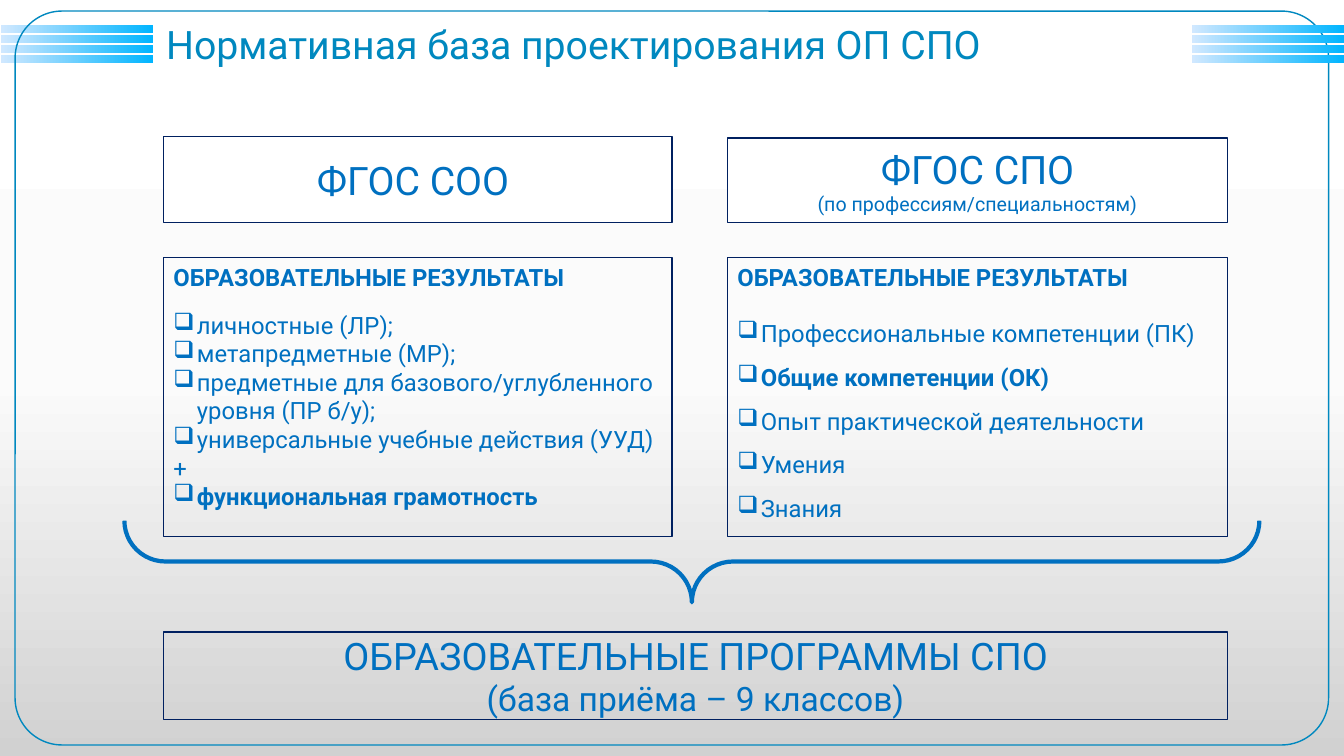
from lxml import etree
from copy import deepcopy
from pptx import Presentation
from pptx.dml import color
from pptx.enum import shapes, text
from pptx.oxml import ns
from pptx.util import Pt

BLUE = "0070C0"
NAVY = "002060"
TEAL = "0088BF"
HEADING = "ОБРАЗОВАТЕЛЬНЫЕ РЕЗУЛЬТАТЫ"


def rgb(value):
    return color.RGBColor.from_string(value)


def paint_gradient(fill, colours, angle):
    for stop, colour in zip(fill.gradient_stops, colours):
        stop.color.rgb = rgb(colour)
    fill.gradient_angle = angle


def paint_background(slide):
    fill = slide.background.fill
    fill.gradient()
    stops = slide.element.find(".//" + ns.qn("a:gsLst"))
    stops.append(deepcopy(stops[-1]))
    fill.gradient_stops[1].position = 0.5
    paint_gradient(fill, ["FFFFFF", "FBFBFB", "D1D1D1"], 270)


def add_outline(slide, kind, box, line, width=1, fill=None):
    outline = slide.shapes.add_shape(kind, *map(Pt, box))
    outline.shadow.inherit = False
    if fill:
        outline.fill.solid()
        outline.fill.fore_color.rgb = rgb(fill)
    else:
        outline.fill.background()
    outline.line.color.rgb = rgb(line)
    outline.line.width = Pt(width)
    return outline


def add_stripes(slide, left):
    for row in range(4):
        stripe = slide.shapes.add_shape(
            shapes.MSO_SHAPE.RECTANGLE, Pt(left), Pt(18 + 7 * row), Pt(108.7), Pt(5.8))
        stripe.shadow.inherit = False
        stripe.line.fill.background()
        stripe.fill.gradient()
        paint_gradient(stripe.fill, ["D1E8FF", "00B5FF"], 0)


def add_bullet(paragraph):
    properties = paragraph._p.get_or_add_pPr()
    properties.set("marL", str(Pt(16.8)))
    properties.set("indent", str(-Pt(16.8)))
    etree.SubElement(properties, ns.qn("a:buChar")).set("char", "❑")


def write(paragraph, words, size, colour=BLUE, bold=False, align=text.PP_ALIGN.LEFT):
    paragraph.text = words
    paragraph.alignment = align
    font = paragraph.font
    font.name = "Roboto"
    font.size = Pt(size)
    font.bold = bold
    font.color.rgb = rgb(colour)


def next_paragraph(frame, index):
    return frame.add_paragraph() if index else frame.paragraphs[0]


def add_title(slide, words):
    title = slide.shapes.add_textbox(Pt(111.6), Pt(15), Pt(737), Pt(39.6)).text_frame
    title.word_wrap = True
    write(title.paragraphs[0], words, 28, TEAL)
    title.paragraphs[0].line_spacing = 0.9


def add_banner(slide, box, lines, fill=None):
    frame = add_outline(slide, shapes.MSO_SHAPE.RECTANGLE, box, NAVY, fill=fill).text_frame
    frame.word_wrap = True
    frame.vertical_anchor = text.MSO_ANCHOR.MIDDLE
    for index, (words, size) in enumerate(lines):
        write(next_paragraph(frame, index), words, size, align=text.PP_ALIGN.CENTER)


def add_results(slide, box, first_gap, gap, items, strong):
    frame = add_outline(slide, shapes.MSO_SHAPE.RECTANGLE, box, NAVY).text_frame
    frame.word_wrap = True
    frame.vertical_anchor = text.MSO_ANCHOR.TOP
    write(frame.paragraphs[0], HEADING, 17, bold=True)
    for index, item in enumerate(items):
        paragraph = frame.add_paragraph()
        if item != "+":
            add_bullet(paragraph)
        write(paragraph, item, 17, bold=item == strong)
        paragraph.space_before = Pt(gap if index else first_gap)


def add_brace(slide):
    brace = add_outline(
        slide, shapes.MSO_SHAPE.LEFT_BRACE, (465.1, -4.3, 58.3, 810.7), BLUE, 3)
    brace.adjustments[0] = 0.504
    brace.adjustments[1] = 0.5
    brace.rotation = 270


def main():
    deck = Presentation()
    deck.slide_width, deck.slide_height = Pt(960), Pt(540)
    slide = deck.slides.add_slide(deck.slide_layouts[6])
    paint_background(slide)

    add_stripes(slide, 0.7)
    border = add_outline(
        slide, shapes.MSO_SHAPE.ROUNDED_RECTANGLE, (10.8, 7.9, 938.2, 524.2), TEAL)
    border.adjustments[0] = 0.064
    add_stripes(slide, 851.5)
    add_title(slide, "Нормативная база проектирования ОП СПО")

    add_banner(slide, (117, 97.4, 363, 61.6), [("ФГОС СОО ", 28)], "FFFFFF")
    add_banner(slide, (519.6, 98.6, 357.4, 60.4),
               [("ФГОС СПО", 28), ("(по профессиям/специальностям)", 14)], "FFFFFF")
    add_results(slide, (116.8, 183.8, 363.4, 199.4), 14, 0, [
        "личностные (ЛР);",
        "метапредметные (МР);",
        "предметные для базового/углубленного уровня (ПР б/у);",
        "универсальные учебные действия (УУД)",
        "+",
        "функциональная грамотность",
    ], "функциональная грамотность")
    add_results(slide, (519.6, 183.8, 357.4, 199.4), 20, 10.8, [
        "Профессиональные компетенции (ПК)",
        "Общие компетенции (ОК)",
        "Опыт практической деятельности",
        "Умения",
        "Знания",
    ], "Общие компетенции (ОК)")
    add_banner(slide, (116.8, 451.4, 760.2, 62.4),
               [("ОБРАЗОВАТЕЛЬНЫЕ ПРОГРАММЫ СПО", 27), ("(база приёма – 9 классов)", 24)])
    add_brace(slide)
    deck.save("out.pptx")


if __name__ == "__main__":
    main()
